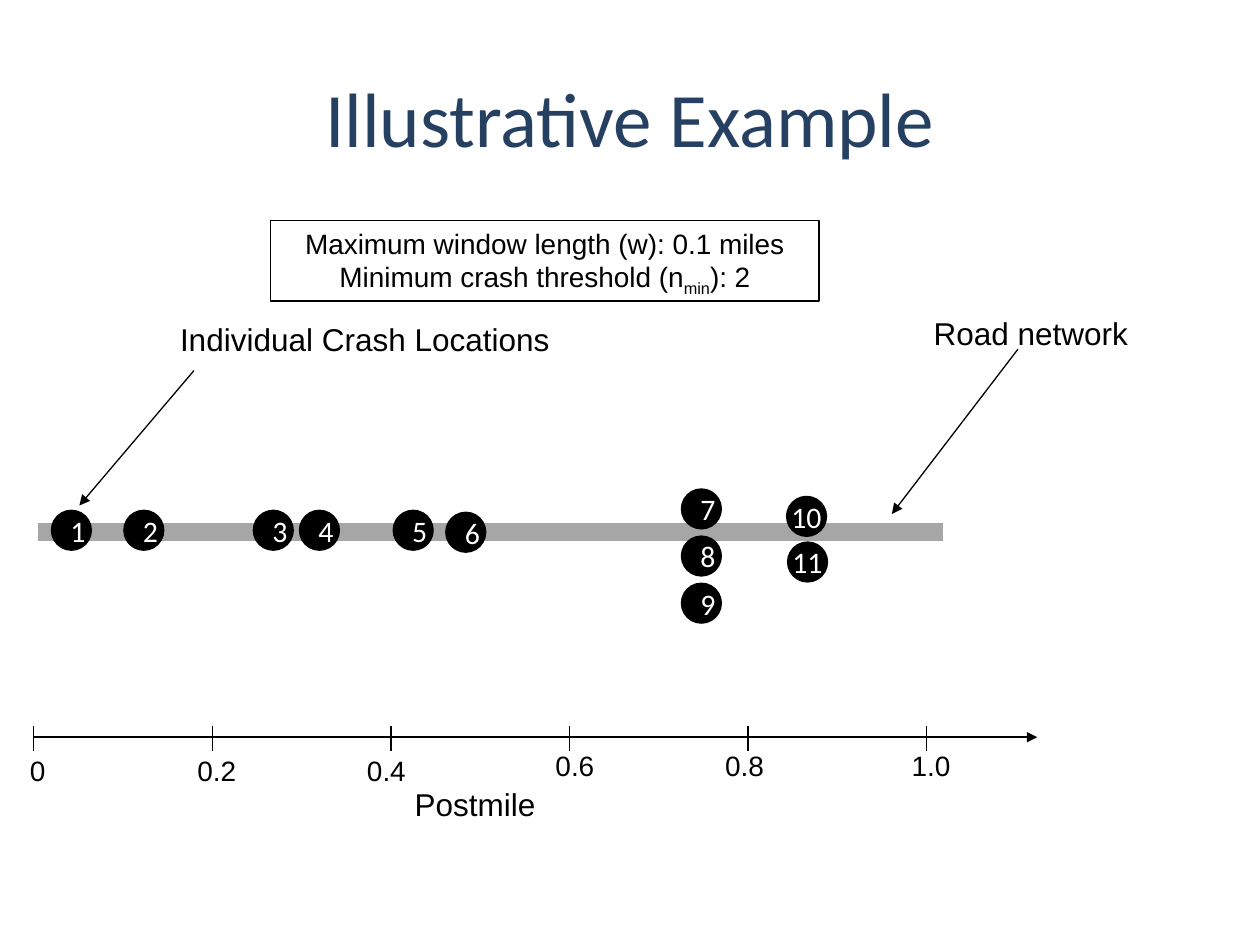
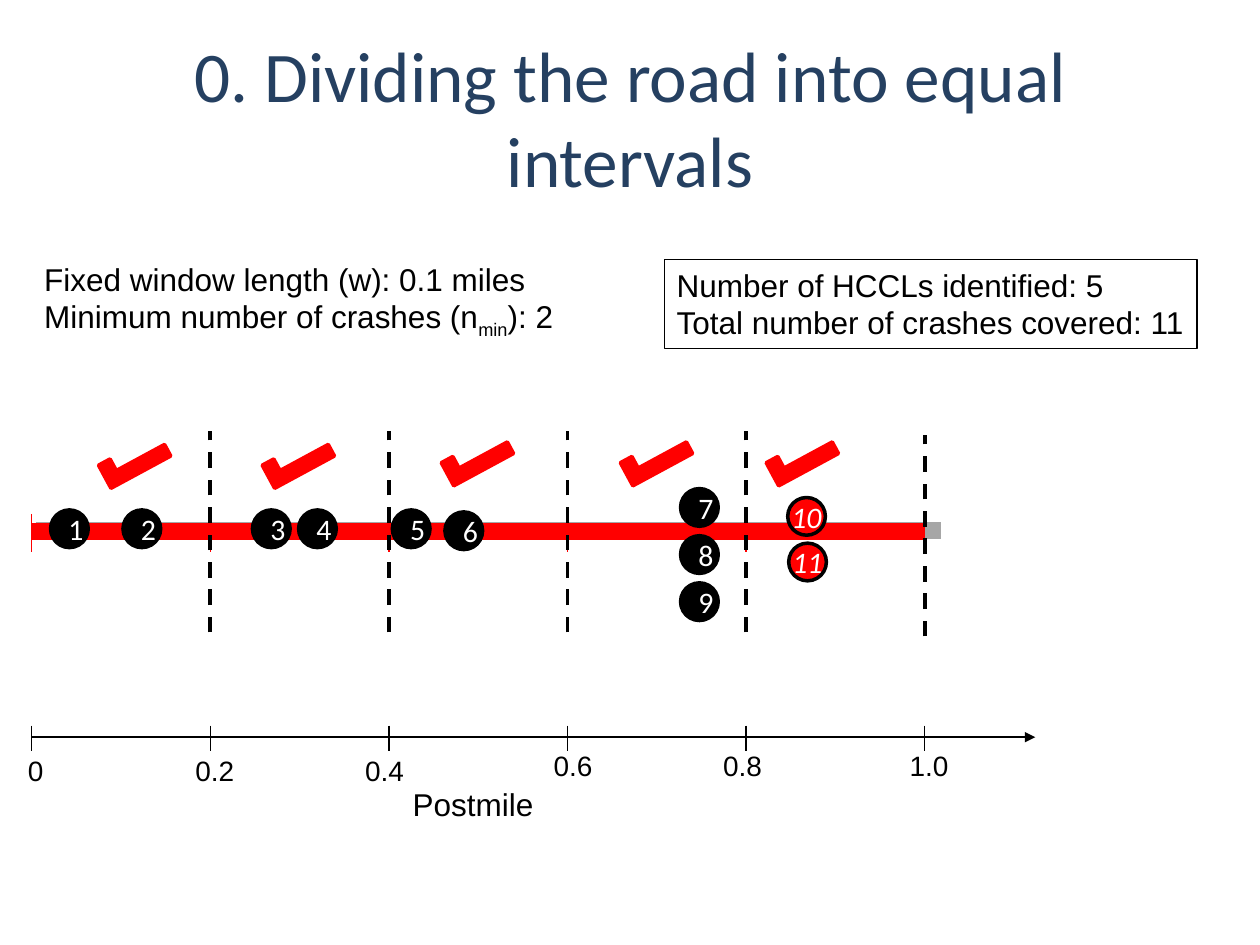
"""Two slides on crash locations along a road and its equal intervals."""
import pptx
import pptx.util
import pptx.dml.color
import pptx.enum.dml
import pptx.enum.shapes
import pptx.enum.text
import pptx.oxml.ns
from lxml import etree

Cm, Pt = pptx.util.Cm, pptx.util.Pt
Shape = pptx.enum.shapes.MSO_SHAPE
Align = pptx.enum.text.PP_ALIGN
Fit = pptx.enum.text.MSO_AUTO_SIZE

HUES = {"title": "254061", "ink": "000000", "paper": "FFFFFF",
        "road": "A6A6A6", "hit": "FF0000"}
STEP, DOT = 3.6, 0.76
MARKS = [("0", 0.08, 15.06), ("0.2", 0.09, 15.06), ("0.4", -0.09, 15.06),
         ("0.6", 0.11, 14.96), ("0.8", -0.07, 14.96), ("1.0", 0.09, 14.96)]
DOTS = [("1", 0.38, 10.31), ("2", 1.84, 10.31), ("3", 4.45, 10.31),
        ("4", 5.38, 10.31), ("5", 7.27, 10.31), ("6", 8.33, 10.35),
        ("7", 13.08, 9.88), ("8", 13.08, 10.83), ("9", 13.08, 11.78)]
PAIR = [("10", 15.88, 10.03), ("11", 15.9, 10.95)]
CHECKS = [(2.03, 9.02), (5.33, 9.02), (8.94, 8.97), (12.55, 8.97), (15.49, 8.97)]
ARROWS = [((20.52, 7.04), (17.98, 10.36)), ((3.91, 7.47), (1.6, 10.19))]

SLIDES = [
    dict(title="Illustrative Example", size=44, start=0.68, lift=0, split=False,
         notes=[
             dict(lines=["Road network"], at=(18.57, 6.2, 5.56, 1.02)),
             dict(lines=["Individual Crash Locations"], at=(3.38, 6.32, 8.69, 1.02)),
             dict(lines=["Maximum window length (w): 0.1 miles",
                         "Minimum crash threshold (n_min_): 2"],
                  at=(5.46, 4.44, 11.05, 1.63), size=16, mid=True, frame=True)]),
    dict(title="0. Dividing the road into equal intervals", size=40.7, start=0.64,
         lift=0.03, split=True,
         notes=[
             dict(lines=["Fixed window length (w): 0.1 miles",
                         "Minimum number of crashes (n_min_): 2"],
                  at=(0.64, 5.11, 11.35, 1.8)),
             dict(lines=["Number of HCCLs identified: 5",
                         "Total number of crashes covered: 11"],
                  at=(13.39, 5.23, 10.74, 1.8), frame=True)]),
]


def hue(name):
    return pptx.dml.color.RGBColor.from_string(HUES[name])


def style(par, size, tone="ink", face="Arial", mid=True):
    par.alignment = Align.CENTER if mid else Align.LEFT
    par.font.size, par.font.name = Pt(size), face
    par.font.color.rgb = hue(tone)


def line(slide, start, end, tone="ink", width=0.75, dash=False, arrow=False):
    link = slide.shapes.add_connector(
        pptx.enum.shapes.MSO_CONNECTOR.STRAIGHT, *map(Cm, start + end))
    link.line.color.rgb, link.line.width = hue(tone), Pt(width)
    if dash:
        link.line.dash_style = pptx.enum.dml.MSO_LINE.DASH
    if arrow:
        tip = etree.SubElement(link.line._get_or_add_ln(), pptx.oxml.ns.qn("a:tailEnd"))
        tip.set("type", "triangle")
    etree.SubElement(link._element.spPr, pptx.oxml.ns.qn("a:effectLst"))


def note(slide, lines, at, size=18, mid=False, frame=False):
    box = slide.shapes.add_textbox(*map(Cm, at))
    text = box.text_frame
    text.word_wrap, text.auto_size = True, Fit.SHAPE_TO_FIT_TEXT
    if frame:
        box.line.color.rgb, box.line.width = hue("ink"), Pt(0.75)
    for row, words in enumerate(lines):
        par = text.add_paragraph() if row else text.paragraphs[0]
        for part, word in enumerate(words.split("_")):
            run = par.add_run()
            run.text = word
            if part % 2:
                run._r.get_or_add_rPr().set("baseline", "-25000")
        style(par, size, mid=mid)


def solid(slide, kind, at, fill, edge):
    form = slide.shapes.add_shape(kind, *map(Cm, at))
    form.shadow.inherit = False
    form.fill.solid()
    form.fill.fore_color.rgb = hue(fill)
    form.line.color.rgb, form.line.width = hue(edge), Pt(2)
    return form


def dot(slide, label, left, top, fill="ink", wrap=True):
    text = solid(slide, Shape.OVAL, (left, top, DOT, DOT), fill, "ink").text_frame
    text.word_wrap = wrap
    text.vertical_anchor = pptx.enum.text.MSO_ANCHOR.MIDDLE
    par = text.paragraphs[0]
    par.text = label
    style(par, 17, "paper", "Calibri")
    if fill == "hit":
        par.font.italic = True


def head(slide, words, size):
    title = slide.shapes.title
    title.left, title.top, title.width, title.height = map(Cm, (1.27, 0.76, 22.86, 3.18))
    title.text_frame.text = words
    title.text_frame.auto_size = Fit.NONE
    style(title.text_frame.paragraphs[0], size, "title", "Calibri")


def axis(slide, start, ticks):
    line(slide, (start, 14.86), (start + 20.23, 14.86), width=1.5, arrow=True)
    for x, (label, shift, top) in zip(ticks, MARKS):
        line(slide, (x, 14.63), (x, 15.14))
        note(slide, [label], (x + shift - 0.73, top, 1.46, 0.94), 16, True)
    note(slide, ["Postmile"], (start + 3.84, 15.7, 10.11, 1.02), mid=True)


def build(deck, data):
    slide = deck.slides.add_slide(deck.slide_layouts[5])
    start, lift, split = data["start"], data["lift"], data["split"]
    ticks = [start + STEP * n for n in range(len(MARKS))]
    head(slide, data["title"], data["size"])
    road = 10.72 - lift
    line(slide, (start + 0.08, road), (start + 18.33, road), "road", 10)
    if split:
        for left, right in zip(ticks, ticks[1:]):
            line(slide, (left, 10.71), (right, 10.71), "hit", 10)
        for x in ticks:
            line(slide, (x, 10.36), (x, 11.13), "hit")
    axis(slide, start, ticks)
    for label, left, top in DOTS:
        dot(slide, label, start + left, top - lift)
    if split:
        for x in ticks[1:]:
            drop = 0.08 if x == ticks[-1] else 0
            line(slide, (x, 12.75 + drop), (x, 8.69 + drop), width=2.25, dash=True)
        for left, top in CHECKS:
            solid(slide, Shape.CORNER, (left, top, 1.37, 0.53), "hit", "hit").rotation = 331.6
    else:
        for tail, tip in ARROWS:
            line(slide, tail, tip, arrow=True)
    for label, left, top in PAIR:
        dot(slide, label, left, top, "hit" if split else "ink", False)
    for item in data["notes"]:
        note(slide, **item)


def main():
    deck = pptx.Presentation()
    deck.slide_width, deck.slide_height = Cm(25.4), Cm(19.05)
    for data in SLIDES:
        build(deck, data)
    deck.save("out.pptx")


if __name__ == "__main__":
    main()
